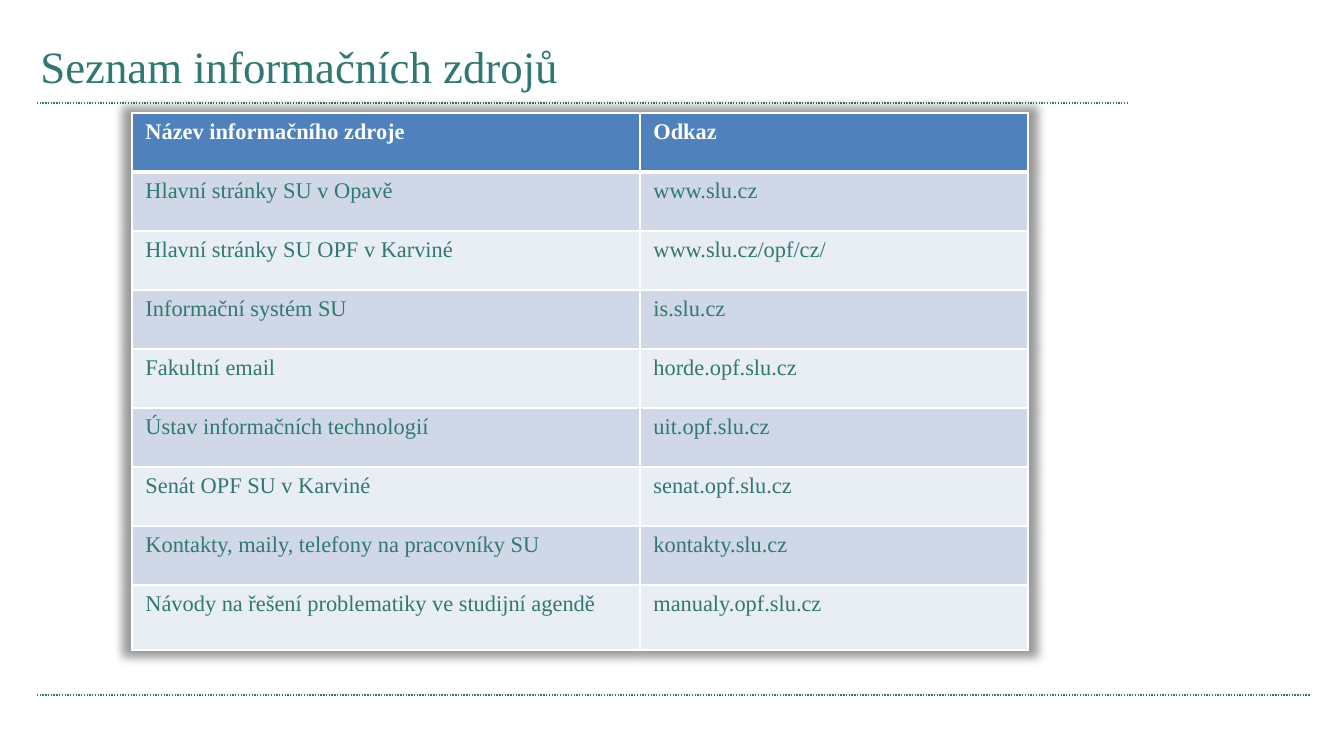
from typing import NamedTuple

from lxml import etree
from pptx import Presentation
from pptx import util as u
from pptx.dml.color import RGBColor
from pptx.enum import dml, shapes, text
from pptx.oxml import parse_xml
from pptx.oxml.ns import qn

PX_PER_INCH = 134.4
FONT = "Times New Roman"
GREEN = RGBColor(0x30, 0x78, 0x71)
WHITE = RGBColor(0xFF, 0xFF, 0xFF)
HEADER_BLUE = RGBColor(0x4F, 0x81, 0xBD)
BANDS = (RGBColor(0xD0, 0xD8, 0xE8), RGBColor(0xE9, 0xED, 0xF4))

COLUMN_WIDTHS = (508, 388)
ROW_HEIGHT, LAST_ROW_HEIGHT = 59, 65
TABLE_LEFT, TABLE_TOP, TABLE_HEIGHT = 132, 113, 543

DRAWING_NS = "http://schemas.openxmlformats.org/drawingml/2006/main"
TABLE_SHADOW = (
    f'<a:effectLst xmlns:a="{DRAWING_NS}">'
    '<a:outerShdw blurRad="63500" sx="102000" sy="102000" algn="ctr" rotWithShape="0">'
    '<a:srgbClr val="000000"><a:alpha val="40000"/></a:srgbClr>'
    '</a:outerShdw></a:effectLst>'
)


class Source(NamedTuple):
    label: str
    address: str


class Rule(NamedTuple):
    left: int
    right: int
    y: int


HEADER = Source("Název informačního zdroje", "Odkaz")
SOURCES = (
    Source("Hlavní stránky SU v Opavě", "www.slu.cz"),
    Source("Hlavní stránky SU OPF v Karviné", "www.slu.cz/opf/cz/"),
    Source("Informační systém SU", "is.slu.cz"),
    Source("Fakultní email", "horde.opf.slu.cz"),
    Source("Ústav informačních technologií", "uit.opf.slu.cz"),
    Source("Senát OPF SU v Karviné", "senat.opf.slu.cz"),
    Source("Kontakty, maily, telefony na pracovníky SU", "kontakty.slu.cz"),
    Source("Návody na řešení problematiky ve studijní agendě", "manualy.opf.slu.cz"),
)
RULES = (Rule(37, 1127, 103), Rule(37, 1310, 695))


def px(length: int) -> u.Emu:
    return u.Inches(length / PX_PER_INCH)


def write(frame, words: str, *, size: int, color: RGBColor, bold: bool = False) -> None:
    frame.text = words
    paragraph = frame.paragraphs[0]
    paragraph.alignment = text.PP_ALIGN.LEFT
    font = paragraph.runs[0].font
    font.name, font.size, font.bold = FONT, u.Pt(size), bold
    font.color.rgb = color


def draw_rule(slide, rule: Rule) -> None:
    line = slide.shapes.add_connector(
        shapes.MSO_CONNECTOR.STRAIGHT, px(rule.left), px(rule.y), px(rule.right), px(rule.y)
    )
    line.line.color.rgb = GREEN
    line.line.width = u.Pt(0.75)
    line.line.dash_style = dml.MSO_LINE.ROUND_DOT
    etree.SubElement(line._element.spPr, qn("a:effectLst"))


def set_borders(cell, *, top: int = 1, bottom: int = 1) -> None:
    """Give the cell white borders, with widths in points."""
    properties = cell._tc.get_or_add_tcPr()
    widths = {"lnL": 1, "lnR": 1, "lnT": top, "lnB": bottom}
    for position, (side, width) in enumerate(widths.items()):
        border = etree.Element(qn(f"a:{side}"), w=str(u.Pt(width)))
        fill = etree.SubElement(border, qn("a:solidFill"))
        etree.SubElement(fill, qn("a:srgbClr"), val=str(WHITE))
        properties.insert(position, border)


def draw_title(slide, words: str) -> None:
    title = slide.shapes.title
    title.left, title.top, title.width, title.height = px(27), px(28), px(656), px(75)
    frame = title.text_frame
    frame.word_wrap = True
    frame.auto_size = text.MSO_AUTO_SIZE.NONE
    frame.vertical_anchor = text.MSO_ANCHOR.MIDDLE
    write(frame, words, size=24, color=GREEN)


def draw_sources(slide) -> None:
    rows = (HEADER, *SOURCES)
    holder = slide.shapes.add_table(
        len(rows), len(COLUMN_WIDTHS), px(TABLE_LEFT), px(TABLE_TOP),
        px(sum(COLUMN_WIDTHS)), px(TABLE_HEIGHT),
    )
    table = holder.table
    table._tbl.tblPr.insert(0, parse_xml(TABLE_SHADOW))
    for column, width in zip(table.columns, COLUMN_WIDTHS):
        column.width = px(width)
    for index, source in enumerate(rows):
        is_header = index == 0
        is_last = index == len(rows) - 1
        table.rows[index].height = px(LAST_ROW_HEIGHT if is_last else ROW_HEIGHT)
        for cell, words in zip(table.rows[index].cells, source):
            cell.fill.solid()
            cell.fill.fore_color.rgb = HEADER_BLUE if is_header else BANDS[(index - 1) % 2]
            set_borders(cell, top=3 if index == 1 else 1, bottom=3 if is_header else 1)
            write(cell.text_frame, words, size=12,
                  color=WHITE if is_header else GREEN, bold=is_header)
    holder.height = px(TABLE_HEIGHT)


def main() -> None:
    deck = Presentation()
    deck.slide_width, deck.slide_height = px(1344), px(756)
    slide = deck.slides.add_slide(deck.slide_layouts[5])
    for rule in RULES:
        draw_rule(slide, rule)
    draw_title(slide, "Seznam informačních zdrojů")
    draw_sources(slide)
    deck.save("out.pptx")


if __name__ == "__main__":
    main()
